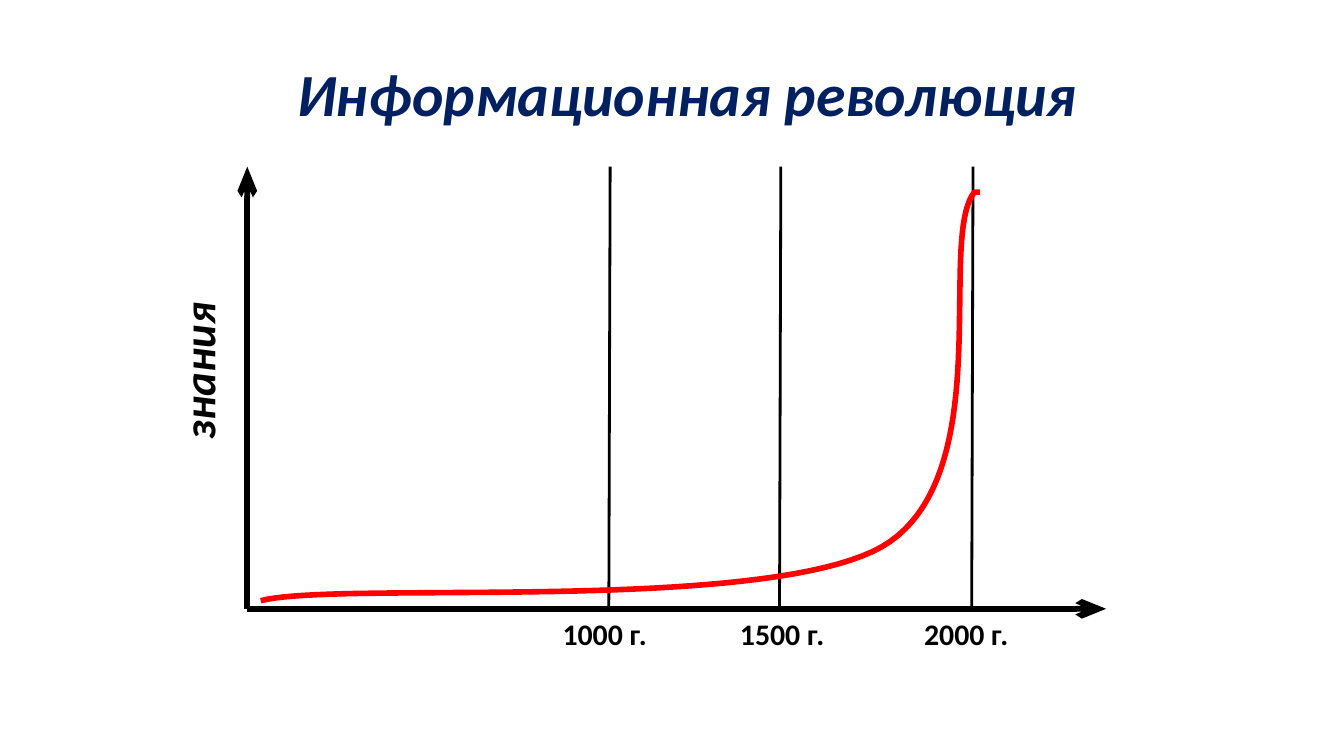
from lxml.etree import SubElement
from pptx import Presentation
from pptx.dml.color import RGBColor
from pptx.enum.shapes import MSO_CONNECTOR
from pptx.enum.text import MSO_ANCHOR, MSO_AUTO_SIZE, PP_ALIGN
from pptx.oxml.ns import qn
from pptx.util import Inches, Pt

TITLE = "Информационная революция"
AXIS_LABEL = "знания"
YEARS = [("1000 г.", 4.54, 4.5), ("1500 г.", 5.81, 5.82), ("2000 г.", 7.24, 7.19)]
COLORS = {"title": "002060", "ink": "000000", "curve": "FF0000"}

SLIDE_WIDTH = 10
SLIDE_HEIGHT = SLIDE_WIDTH * 9 / 16
ORIGIN_X, ORIGIN_Y = 1.84, 4.53
AXIS_TOP, AXIS_RIGHT = 1.24, 8.23
CURVE_START = (1.94, 4.47)
CURVE_SEGMENTS = [
    [(2.5, 4.32), (5.67, 4.57), (6.56, 4.07)],
    [(7.44, 3.56), (6.97, 1.78), (7.25, 1.43)],
]
CURVE_END = (7.29, 1.43)
STEPS = 40
LABEL_WIDTH, LABEL_HEIGHT = 1.6, 0.47


def color(name):
    return RGBColor.from_string(COLORS[name])


def add_line(slide, start, end, width, arrow=False):
    points = [Inches(value) for value in (*start, *end)]
    line = slide.shapes.add_connector(MSO_CONNECTOR.STRAIGHT, *points)
    line.line.color.rgb = color("ink")
    line.line.width = Pt(width)
    if arrow:
        outline = line.line._get_or_add_ln()
        SubElement(outline, qn("a:tailEnd"), type="arrow", len="lg")
    SubElement(line._element.spPr, qn("a:effectLst"))


def fill_text(shape, text, size, color_name, italic):
    frame = shape.text_frame
    frame.text = text
    frame.word_wrap = True
    frame.auto_size = MSO_AUTO_SIZE.NONE
    frame.vertical_anchor = MSO_ANCHOR.TOP
    paragraph = frame.paragraphs[0]
    paragraph.alignment = PP_ALIGN.CENTER
    font = paragraph.font
    font.name = "Calibri"
    font.size = Pt(size)
    font.bold = True
    font.italic = italic
    font.color.rgb = color(color_name)
    return frame


def add_label(slide, box, text, size, italic=False):
    shape = slide.shapes.add_textbox(*[Inches(value) for value in box])
    return fill_text(shape, text, size, "ink", italic)


def bezier_point(controls, t):
    weights = ((1 - t) ** 3, 3 * t * (1 - t) ** 2, 3 * t**2 * (1 - t), t**3)
    return tuple(sum(w * p[axis] for w, p in zip(weights, controls)) for axis in (0, 1))


def add_curve(slide):
    points = [CURVE_START]
    for segment in CURVE_SEGMENTS:
        controls = [points[-1], *segment]
        points += [bezier_point(controls, step / STEPS) for step in range(1, STEPS + 1)]
    points.append(CURVE_END)
    emu_points = [(Inches(x), Inches(y)) for x, y in points]
    builder = slide.shapes.build_freeform(*emu_points[0])
    builder.add_line_segments(emu_points[1:], close=False)
    curve = builder.convert_to_shape()
    curve.shadow.inherit = False
    curve.fill.background()
    curve.line.color.rgb = color("curve")
    curve.line.width = Pt(3)


def main():
    presentation = Presentation()
    presentation.slide_width = Inches(SLIDE_WIDTH)
    presentation.slide_height = Inches(SLIDE_HEIGHT)
    slide = presentation.slides.add_slide(presentation.slide_layouts[5])

    title = slide.shapes.title
    title.left, title.top = Inches(0.51), Inches(0.37)
    title.width, title.height = Inches(9.21), Inches(0.64)
    fill_text(title, TITLE, 32, "title", True)

    origin = (ORIGIN_X, ORIGIN_Y)
    for end in [(ORIGIN_X, AXIS_TOP), (AXIS_RIGHT, ORIGIN_Y)]:
        add_line(slide, origin, end, 3, arrow=True)
    for _, x, _ in YEARS:
        add_line(slide, (x, AXIS_TOP), (x - 0.01, ORIGIN_Y), 1.5)
    add_curve(slide)

    for text, _, center in YEARS:
        box = (center - LABEL_WIDTH / 2, ORIGIN_Y, LABEL_WIDTH, LABEL_HEIGHT)
        add_label(slide, box, text, 16)
    frame = add_label(slide, (1.22, 2.14, 0.61, 1.24), AXIS_LABEL, 24, italic=True)
    frame.margin_top = frame.margin_bottom = 0
    frame._txBody.bodyPr.set("vert", "vert270")

    presentation.save("out.pptx")


if __name__ == "__main__":
    main()
